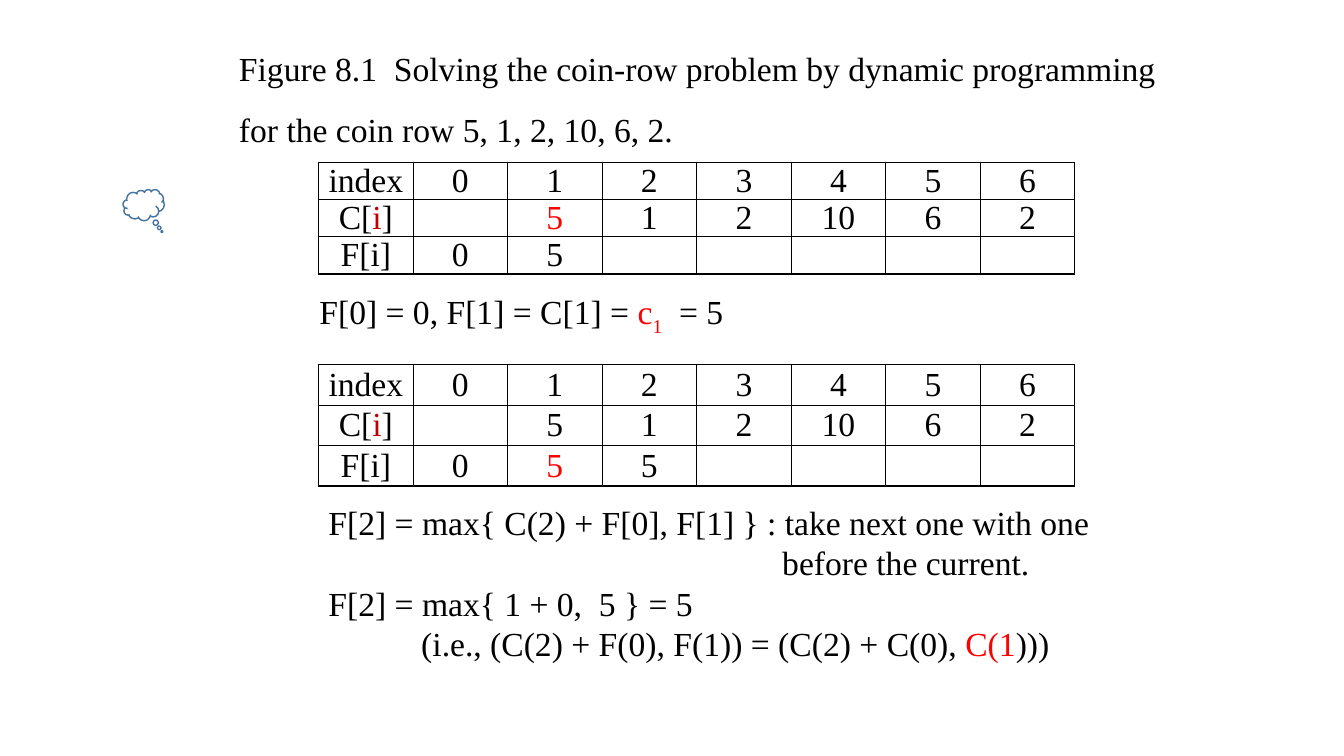
import pptx
import pptx.util
import pptx.dml.color
import pptx.enum.shapes
import pptx.enum.text
import pptx.oxml
import pptx.oxml.ns

Inches = pptx.util.Inches
Pt = pptx.util.Pt
Align = pptx.enum.text.PP_ALIGN
Anchor = pptx.enum.text.MSO_ANCHOR
Fit = pptx.enum.text.MSO_AUTO_SIZE

BLACK, WHITE, RED, DARK, BLUE = "000000", "FFFFFF", "FF0000", "C00000", "43739E"
INDEX = ["index", "0", "1", "2", "3", "4", "5", "6"]
COINS = ["1", "2", "10", "6", "2"]
LABEL = ["C[", ("i", DARK), "]"]


def color(code):
    return pptx.dml.color.RGBColor.from_string(code)


def style(font, code=BLACK):
    font.name = "Times New Roman"
    font.size = Pt(24)
    font.color.rgb = color(code)


def write(para, parts):
    for part in [parts] if isinstance(parts, (str, tuple)) else parts:
        text, code = (part, BLACK) if isinstance(part, str) else part
        run = para.add_run()
        run.text = text
        style(run.font, code)


def border(cell):
    props = cell._tc.get_or_add_tcPr()
    space = pptx.oxml.ns.nsdecls("a")
    for side in ("lnL", "lnR", "lnT", "lnB"):
        props.append(pptx.oxml.parse_xml(
            f'<a:{side} {space} w="12700"><a:solidFill>'
            f'<a:srgbClr val="{BLACK}"/></a:solidFill></a:{side}>'))


def add_title(slide, left, top, width, height):
    title = slide.shapes.title
    title.left, title.top = Inches(left), Inches(top)
    title.width, title.height = Inches(width), Inches(height)
    frame = title.text_frame
    frame.text = ("Figure 8.1  Solving the coin-row problem by dynamic programming "
                  "for the coin row 5, 1, 2, 10, 6, 2.")
    frame.auto_size = Fit.NONE
    frame.vertical_anchor = Anchor.TOP
    para = frame.paragraphs[0]
    para.alignment = Align.LEFT
    para.line_spacing = 1.5
    style(para.runs[0].font)


def add_grid(slide, left, top, width, height, rows):
    count = len(INDEX)
    table = slide.shapes.add_table(
        len(rows), count, Inches(left), Inches(top), Inches(width), Inches(height)).table
    table.first_row = table.horz_banding = False
    for line, row in zip(table.rows, rows):
        line.height = Inches(height / len(rows))
        for cell, parts in zip(line.cells, row + [""] * (count - len(row))):
            cell.margin_left = cell.margin_right = Inches(0.07)
            cell.margin_top = cell.margin_bottom = 0
            cell.vertical_anchor = Anchor.MIDDLE
            border(cell)
            cell.fill.solid()
            cell.fill.fore_color.rgb = color(WHITE)
            para = cell.text_frame.paragraphs[0]
            para.alignment = Align.CENTER
            if parts:
                write(para, parts)
            else:
                style(para.font)


def add_lines(slide, left, top, width, height, lines):
    box = slide.shapes.add_textbox(Inches(left), Inches(top), Inches(width), Inches(height))
    frame = box.text_frame
    frame.word_wrap = True
    for spot, (indent, parts) in enumerate(lines):
        para = frame.add_paragraph() if spot else frame.paragraphs[0]
        if indent:
            para._p.get_or_add_pPr().set("marL", str(Inches(indent)))
        write(para, parts)
    return frame


def add_cloud(slide, left, top, width, height):
    cloud = slide.shapes.add_shape(
        pptx.enum.shapes.MSO_SHAPE.CLOUD_CALLOUT,
        Inches(left), Inches(top), Inches(width), Inches(height))
    cloud.adjustments[0], cloud.adjustments[1] = 0.44, 0.85
    cloud.shadow.inherit = False
    cloud.fill.solid()
    cloud.fill.fore_color.rgb = color(WHITE)
    cloud.line.color.rgb = color(BLUE)
    cloud.line.width = Pt(1)


def main():
    deck = pptx.Presentation()
    deck.slide_width, deck.slide_height = Inches(13.33), Inches(7.5)
    slide = deck.slides.add_slide(deck.slide_layouts[5])
    add_title(slide, 2.27, 0.23, 9.59, 1.24)
    add_grid(slide, 3.16, 1.61, 7.5, 1.11, [
        INDEX,
        [LABEL, "", ("5", RED)] + COINS,
        ["F[i]", "0", "5"]])
    base = add_lines(slide, 3.07, 2.84, 4.26, 0.5, [
        (0, ["F[0] = 0, F[1] = C[1] = ", ("c", RED), ("1", RED), "  = 5"])])
    base.paragraphs[0].runs[2]._r.get_or_add_rPr().set("baseline", "-25000")
    add_grid(slide, 3.16, 3.62, 7.5, 1.11, [
        INDEX,
        [LABEL, "", "5"] + COINS,
        ["F[i]", "0", ("5", RED), "5"]])
    add_lines(slide, 3.16, 4.93, 7.8, 1.72, [
        (0, "F[2] = max{ C(2) + F[0], F[1] } : take next one with one"),
        (4.5, "before the current."),
        (0, "F[2] = max{ 1 + 0,  5 } = 5"),
        (0.92, ["(i.e., (C(2) + F(0), F(1)) = (C(2) + C(0), ", ("C(1", RED), ")))"])])
    add_cloud(slide, 1.22, 1.88, 0.41, 0.31)
    deck.save("out.pptx")


if __name__ == "__main__":
    main()
